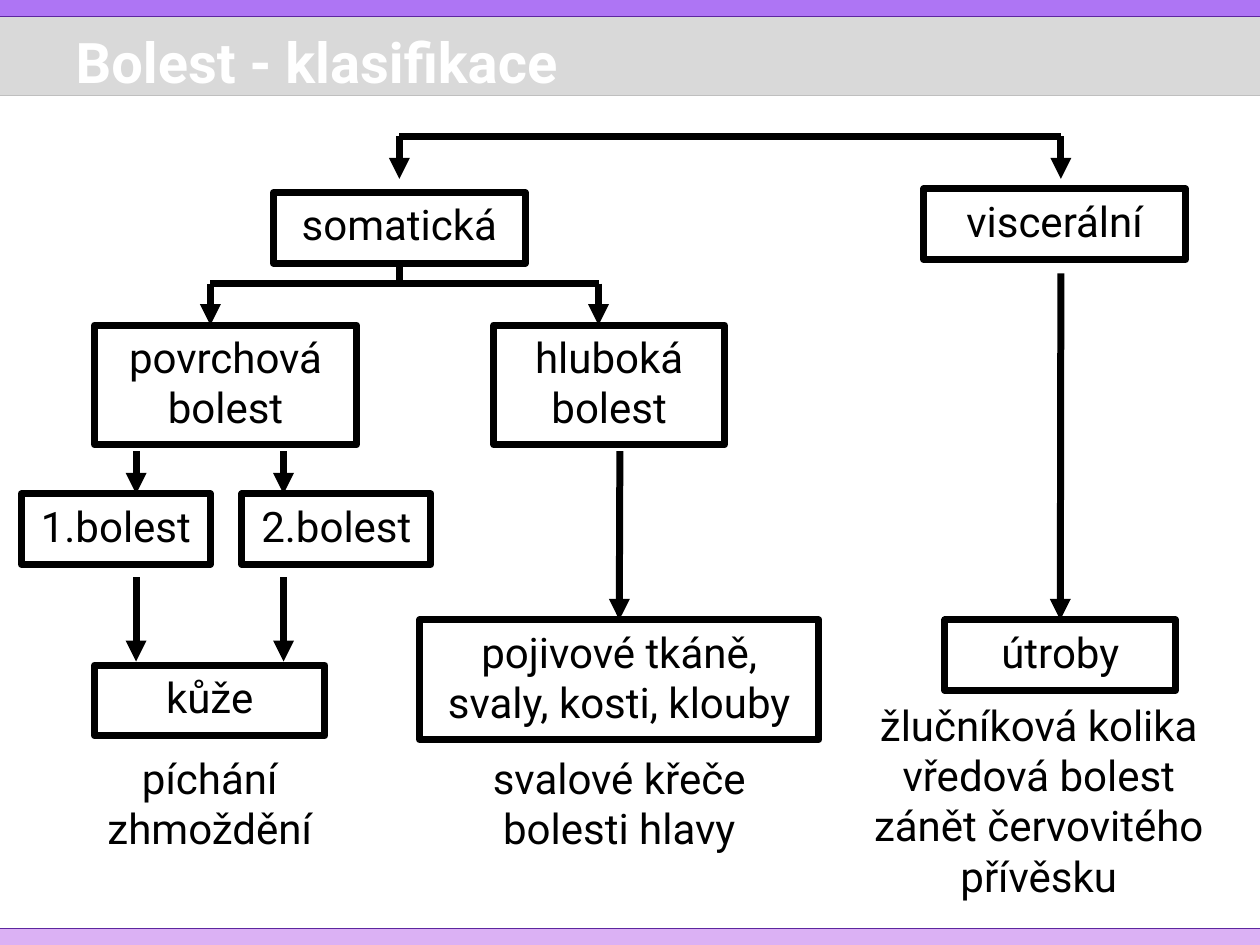
"""Build a slide with a tree diagram that classifies pain."""
import pptx
import pptx.dml.color
import pptx.enum.shapes
import pptx.enum.text
import pptx.oxml.ns
import pptx.util
from lxml import etree
from pptx.util import Inches

BLACK = pptx.dml.color.RGBColor(0x00, 0x00, 0x00)
WHITE = pptx.dml.color.RGBColor(0xFF, 0xFF, 0xFF)
GREY = pptx.dml.color.RGBColor(0xD9, 0xD9, 0xD9)
GREY_LINE = pptx.dml.color.RGBColor(0xBF, 0xBF, 0xBF)
VIOLET = pptx.dml.color.RGBColor(0xAE, 0x75, 0xF4)
LILAC = pptx.dml.color.RGBColor(0xDB, 0xB1, 0xF4)
PURPLE = pptx.dml.color.RGBColor(0x5D, 0x26, 0x9F)
FONT = "Roboto"
RECTANGLE = pptx.enum.shapes.MSO_SHAPE.RECTANGLE


def add_line(shapes, start, end, color=BLACK, width=4, arrow=False):
    """Draw a straight line, with an arrowhead at its end if wanted."""
    line = shapes.add_connector(
        pptx.enum.shapes.MSO_CONNECTOR.STRAIGHT, *map(Inches, start + end))
    line.line.color.rgb = color
    line.line.width = pptx.util.Pt(width)
    if arrow:
        outline = line.line._get_or_add_ln()
        etree.SubElement(outline, pptx.oxml.ns.qn("a:tailEnd"), type="triangle")
    etree.SubElement(line._element.spPr, pptx.oxml.ns.qn("a:effectLst"))
    return line


def write_text(shape, text):
    """Fill a shape with centred paragraphs, one for each line of text."""
    frame = shape.text_frame
    frame.text = text
    frame.word_wrap = True
    frame.auto_size = pptx.enum.text.MSO_AUTO_SIZE.SHAPE_TO_FIT_TEXT
    frame.vertical_anchor = pptx.enum.text.MSO_ANCHOR.TOP
    for para in frame.paragraphs:
        para.alignment = pptx.enum.text.PP_ALIGN.CENTER
        para.font.name = FONT
        para.font.size = pptx.util.Pt(24)
        para.font.color.rgb = BLACK


deck = pptx.Presentation()
deck.slide_width = Inches(10)
deck.slide_height = Inches(7.5)
page = deck.slides.add_slide(deck.slide_layouts[5])
shapes = page.shapes

for top, height, color in [(0.13, 0.63, GREY), (7.37, 0.13, LILAC), (0, 0.13, VIOLET)]:
    band = shapes.add_shape(RECTANGLE, 0, Inches(top), Inches(10), Inches(height))
    band.shadow.inherit = False
    band.fill.solid()
    band.fill.fore_color.rgb = color
    band.line.fill.background()
for y, color in [(7.37, PURPLE), (0.13, PURPLE), (0.76, GREY_LINE)]:
    add_line(shapes, (0, y), (10, y), color, 0.75)

title = shapes.title
title.element.getparent().append(title.element)
title.left, title.top = Inches(0.5), Inches(0.21)
title.width, title.height = Inches(9), Inches(0.55)
title.text_frame.text = "Bolest - klasifikace"
title.text_frame.vertical_anchor = pptx.enum.text.MSO_ANCHOR.MIDDLE
heading = title.text_frame.paragraphs[0]
heading.alignment = pptx.enum.text.PP_ALIGN.LEFT
heading.font.name = FONT
heading.font.size = pptx.util.Pt(32)
heading.font.bold = True
heading.font.color.rgb = WHITE

boxes = {}
for text, left, top, width, height in [
    ("somatická", 2.17, 1.53, 2, 0.56),
    ("viscerální", 7.33, 1.5, 2.08, 0.56),
    ("povrchová bolest", 0.75, 2.58, 2.08, 0.95),
    ("hluboká bolest", 3.92, 2.58, 1.83, 0.95),
    ("1.bolest", 0.17, 3.92, 1.5, 0.56),
    ("2.bolest", 1.92, 3.92, 1.5, 0.56),
    ("kůže", 0.75, 5.28, 1.83, 0.56),
    ("pojivové tkáně, svaly, kosti, klouby", 3.33, 4.92, 3.17, 0.95),
    ("útroby", 7.5, 4.92, 1.83, 0.56),
]:
    box = shapes.add_shape(RECTANGLE, *map(Inches, (left, top, width, height)))
    box.shadow.inherit = False
    box.fill.background()
    box.line.color.rgb = BLACK
    box.line.width = pptx.util.Pt(4)
    write_text(box, text)
    boxes[text] = box

for text, left, top, width, height in [
    ("píchání\nzhmoždění", 0.75, 5.92, 1.83, 0.9),
    ("svalové křeče\nbolesti hlavy", 3.75, 5.92, 2.33, 0.9),
    ("žlučníková kolika\nvředová bolest\nzánět červovitého přívěsku", 6.83, 5.5, 2.83, 1.7),
]:
    examples = shapes.add_textbox(*map(Inches, (left, top, width, height)))
    write_text(examples, text)

add_line(shapes, (3.17, 1.08), (8.42, 1.08))
add_line(shapes, (1.67, 2.25), (4.75, 2.25))
stem = add_line(shapes, (3.17, 2.09), (3.17, 2.25))
stem.begin_connect(boxes["somatická"], 2)

for x, top, bottom, target in [
    (3.17, 1.08, 1.42, None),
    (8.42, 1.08, 1.42, None),
    (1.67, 2.25, 2.58, None),
    (4.75, 2.25, 2.58, None),
    (1.08, 3.58, 3.92, None),
    (2.25, 3.58, 3.92, None),
    (1.08, 4.58, 5.25, None),
    (2.25, 4.58, 5.25, None),
    (4.92, 3.58, 4.92, "pojivové tkáně, svaly, kosti, klouby"),
    (8.42, 2.17, 4.92, "útroby"),
]:
    arrow = add_line(shapes, (x, top), (x, bottom), arrow=True)
    if target:
        arrow.end_connect(boxes[target], 0)

deck.save("out.pptx")
